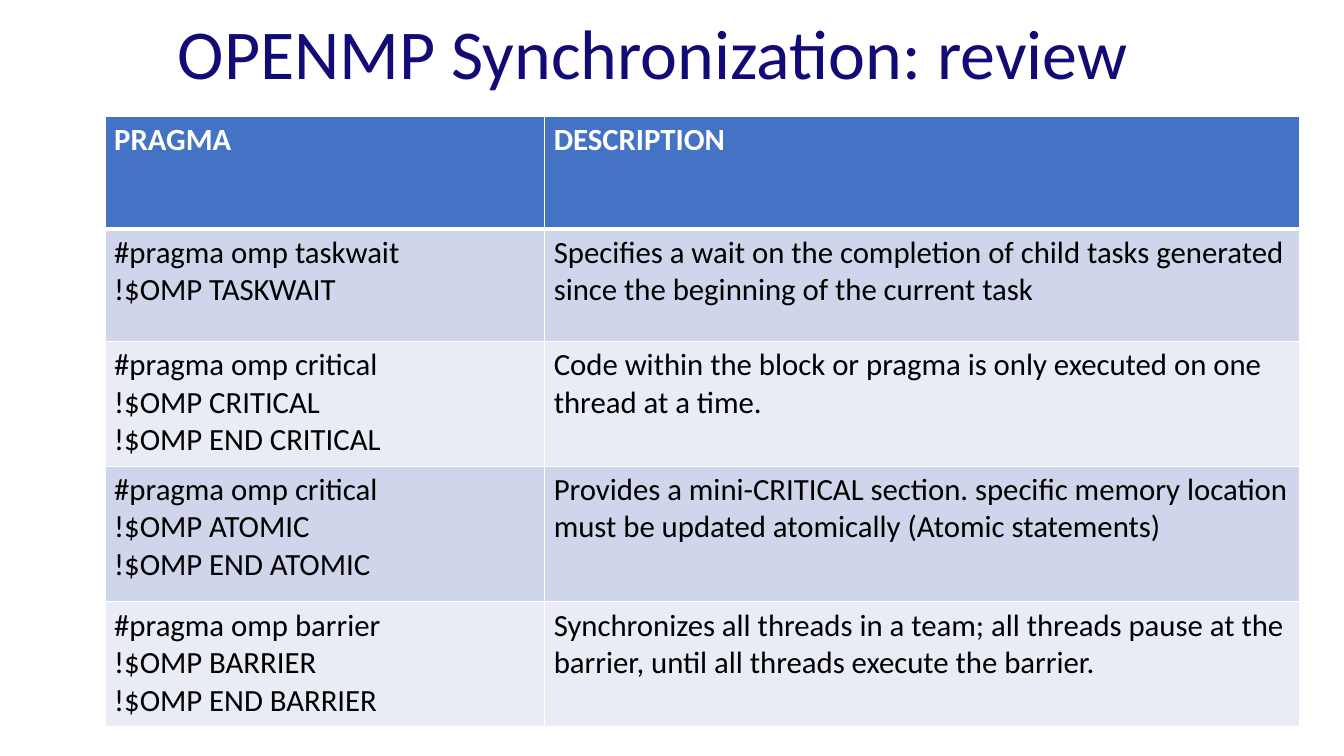
from dataclasses import dataclass

from lxml import etree
from pptx import Presentation
from pptx.dml.color import RGBColor
from pptx.enum import text
from pptx.oxml.ns import qn
from pptx.util import Pt


@dataclass(frozen=True)
class Theme:
    font: str = "Calibri"
    title_size: float = 50
    table_size: float = 22
    title: str = "120A76"
    header_text: str = "FFFFFF"
    body_text: str = "000000"
    header_fill: str = "4472C4"
    band_fills: tuple = ("CFD5EA", "E9EBF5")
    border: str = "FFFFFF"
    border_width: float = 1
    header_rule: float = 3


class SlideBuilder:
    def __init__(self, presentation, theme):
        self.theme = theme
        self.slide = presentation.slides.add_slide(presentation.slide_layouts[6])

    def add_run(self, paragraph, words, size, color, bold=False):
        run = paragraph.add_run()
        run.text = words
        run.font.name = self.theme.font
        run.font.size = Pt(size)
        run.font.bold = bold
        run.font.color.rgb = RGBColor.from_string(color)

    def add_title(self, words, left, top, width, height):
        shape = self.slide.shapes.add_textbox(Pt(left), Pt(top), Pt(width), Pt(height))
        frame = shape.text_frame
        frame.word_wrap = True
        frame.vertical_anchor = text.MSO_ANCHOR.MIDDLE
        paragraph = frame.paragraphs[0]
        paragraph.alignment = text.PP_ALIGN.LEFT
        paragraph.line_spacing = 0.9
        self.add_run(paragraph, words, self.theme.title_size, self.theme.title)

    def add_border(self, cell, side, width):
        """Draw one cell edge; side is L, R, T or B."""
        line = etree.Element(qn(f"a:ln{side}"), w=str(Pt(width)))
        fill = etree.SubElement(line, qn("a:solidFill"))
        etree.SubElement(fill, qn("a:srgbClr"), val=self.theme.border)
        return line

    def style_cell(self, cell, fill, top_width, bottom_width):
        cell.margin_left = cell.margin_right = Pt(6.6)
        cell.margin_top = cell.margin_bottom = Pt(3.6)
        cell.fill.solid()
        cell.fill.fore_color.rgb = RGBColor.from_string(fill)
        side_width = self.theme.border_width
        widths = {"L": side_width, "R": side_width, "T": top_width, "B": bottom_width}
        properties = cell._tc.get_or_add_tcPr()
        for position, (side, width) in enumerate(widths.items()):
            properties.insert(position, self.add_border(cell, side, width))

    def add_table(self, rows, left, top, column_widths, row_heights):
        """Add a table with a header row; each cell is a list of paragraphs."""
        theme = self.theme
        frame = self.slide.shapes.add_table(
            len(rows), len(column_widths), Pt(left), Pt(top),
            Pt(sum(column_widths)), Pt(sum(row_heights)))
        table = frame.table
        for column, width in zip(table.columns, column_widths):
            column.width = Pt(width)
        for row_index, (row, height) in enumerate(zip(rows, row_heights)):
            table.rows[row_index].height = Pt(height)
            header = row_index == 0
            fill = theme.header_fill if header else theme.band_fills[(row_index - 1) % 2]
            color = theme.header_text if header else theme.body_text
            top_width = theme.header_rule if row_index == 1 else theme.border_width
            bottom_width = theme.header_rule if header else theme.border_width
            for column_index, lines in enumerate(row):
                cell = table.cell(row_index, column_index)
                self.style_cell(cell, fill, top_width, bottom_width)
                for line_index, line in enumerate(lines):
                    body = cell.text_frame
                    paragraph = body.add_paragraph() if line_index else body.paragraphs[0]
                    self.add_run(paragraph, line, theme.table_size, color, header)


PRAGMA_ROWS = [
    (["PRAGMA"], ["DESCRIPTION"]),
    (["#pragma omp taskwait", "!$OMP TASKWAIT"],
     ["Specifies a wait on the completion of child tasks generated "
      "since the beginning of the current task"]),
    (["#pragma omp critical", "!$OMP CRITICAL", "!$OMP END CRITICAL"],
     ["Code within the block or pragma is only executed on one thread at a time."]),
    (["#pragma omp critical", "!$OMP ATOMIC", "!$OMP END ATOMIC"],
     ["Provides a mini-CRITICAL section. specific memory location "
      "must be updated atomically (Atomic statements)"]),
    (["#pragma omp barrier", "!$OMP BARRIER", "!$OMP END BARRIER"],
     ["Synchronizes all threads in a team; all threads pause at the barrier, "
      "until all threads execute the barrier."]),
]


def main():
    presentation = Presentation()
    presentation.slide_width, presentation.slide_height = Pt(960), Pt(540)
    builder = SlideBuilder(presentation, Theme())
    builder.add_title("OPENMP Synchronization: review", 120, 2, 716, 77)
    builder.add_table(PRAGMA_ROWS, 75, 83, [314, 539], [80.5, 80.5, 89, 97, 89])
    presentation.save("out.pptx")


if __name__ == "__main__":
    main()
